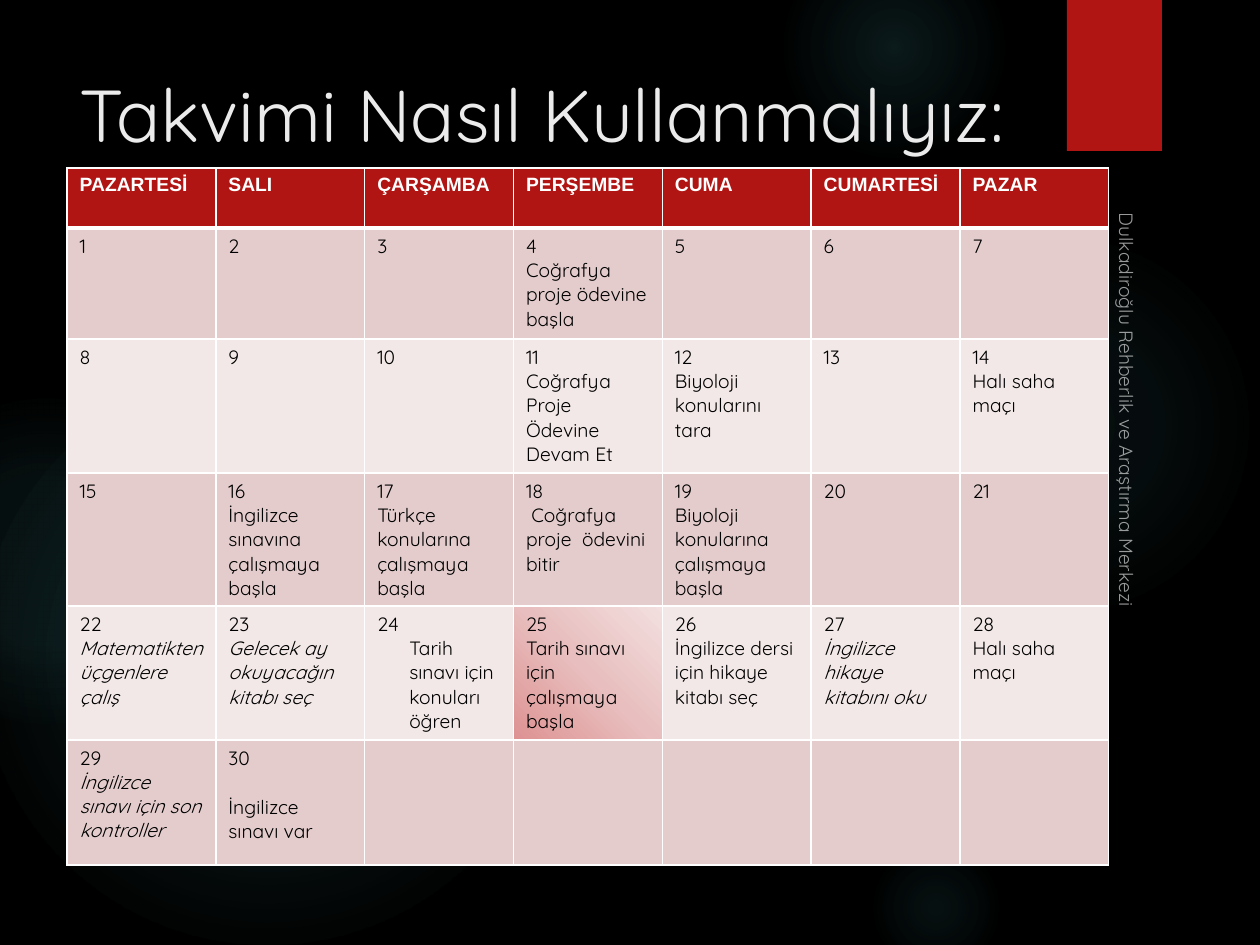
from lxml.etree import SubElement
from pptx import Presentation
from pptx.dml.color import RGBColor
from pptx.enum.shapes import MSO_SHAPE
from pptx.enum.text import MSO_ANCHOR
from pptx.oxml import parse_xml
from pptx.oxml.ns import nsdecls, qn
from pptx.util import Pt

PX = 914400 / 126
FONT = "Quicksand"
RED, WHITE, BLACK, GLOW = "B01513", "FFFFFF", "000000", "50B9C1"
DARK, PALE = "E4CCCC", "F2E8E7"

# left, top, size, then (stop, opacity) pairs in percent
GLOWS = [
    (868, 231, 388, [(0, 7), (36, 6), (69, 0)]),
    (784, -63, 220, [(0, 14), (36, 7), (73, 0)]),
    (868, 840, 136, [(0, 9), (36, 5), (66, 0)]),
    (-21, 368, 577, [(0, 11), (36, 10), (75, 0)]),
    (-116, 399, 325, [(0, 8), (36, 8), (72, 0)]),
]
DAYS = ["PAZARTESİ", "SALI", "ÇARŞAMBA", "PERŞEMBE", "CUMA", "CUMARTESİ", "PAZAR"]
TASKS = {
    4: "Coğrafya proje ödevine başla",
    11: "Coğrafya Proje Ödevine Devam Et",
    12: "Biyoloji konularını tara",
    14: "Halı saha maçı",
    16: "İngilizce sınavına çalışmaya başla",
    17: "Türkçe konularına çalışmaya başla",
    18: " Coğrafya proje  ödevini bitir",
    19: "Biyoloji konularına çalışmaya başla",
    22: "Matematikten üçgenlere çalış",
    23: "Gelecek ay okuyacağın kitabı seç",
    24: "Tarih sınavı için konuları öğren",
    25: "Tarih sınavı için çalışmaya başla",
    26: "İngilizce dersi için hikaye kitabı seç",
    27: "İngilizce hikaye kitabını oku",
    28: "Halı saha maçı",
    29: "İngilizce sınavı için son kontroller",
    30: "İngilizce sınavı var",
}
ITALIC = {22, 23, 27, 29}
INDENTED, EXAM, LAST = 24, 25, 30
ROWS = [60, 111, 134, 133, 134, 125]
WIDTH = 1042


def px(n):
    return round(n * PX)


def box(*nums):
    return [px(n) for n in nums]


def rgb(code):
    return RGBColor.from_string(code)


def style(par, size, color, font=FONT, bold=False, italic=False):
    face = par.font
    face.size, face.name, face.bold, face.italic = Pt(size), font, bold, italic
    face.color.rgb = rgb(color)


def radial(stops, focus):
    """Make a circular gradient from (stop, colour, opacity) around focus."""
    marks = "".join(
        f'<a:gs pos="{pos * 1000}"><a:srgbClr val="{code}">'
        f'<a:alpha val="{alpha * 1000}"/></a:srgbClr></a:gs>'
        for pos, code, alpha in stops)
    edges = " ".join(f'{side}="{n * 1000}"' for side, n in zip("ltrb", focus))
    return parse_xml(
        f'<a:gradFill {nsdecls("a")} rotWithShape="1"><a:gsLst>{marks}</a:gsLst>'
        f'<a:path path="circle"><a:fillToRect {edges}/></a:path></a:gradFill>')


def add_shape(slide, kind, *place):
    shape = slide.shapes.add_shape(kind, *box(*place))
    shape.shadow.inherit = False
    shape.line.fill.background()
    return shape


def add_glow(slide, left, top, size, stops):
    glow = add_shape(slide, MSO_SHAPE.OVAL, left, top, size, size)
    fill = radial([(pos, GLOW, alpha) for pos, alpha in stops], [50] * 4)
    glow._element.spPr.find(qn("a:prstGeom")).addnext(fill)


def add_text(slide, place, text, size, color, anchor):
    shape = slide.shapes.add_textbox(*box(*place))
    frame = shape.text_frame
    frame.word_wrap = True
    frame.vertical_anchor = anchor
    frame.text = text
    style(frame.paragraphs[0], size, color)
    return shape


def add_side(slide):
    side = add_text(slide, (859, 450, 532, 32),
                    "Dulkadiroğlu Rehberlik ve Araştırma Merkezi",
                    11, WHITE, MSO_ANCHOR.BOTTOM)
    side.rotation = 90
    for color in side._element.iter(qn("a:srgbClr")):
        SubElement(color, qn("a:alpha"), val="60000")


def frame_cell(cell, row):
    """Draw white borders, with a thick one under the header."""
    props = cell._tc.get_or_add_tcPr()
    thick = {0: "B", 1: "T"}.get(row)
    for side in "LRTB":
        width = 3 if side == thick else 1
        props.append(parse_xml(
            f'<a:ln{side} {nsdecls("a")} w="{Pt(width)}"><a:solidFill>'
            f'<a:srgbClr val="{WHITE}"/></a:solidFill></a:ln{side}>'))


def paint(cell, color):
    cell.fill.solid()
    cell.fill.fore_color.rgb = rgb(color)


def fill_day(cell, day):
    frame, task = cell.text_frame, TASKS.get(day)
    frame.text = f"{day}\n{task}" if task else str(day)
    for par in frame.paragraphs:
        style(par, 11, BLACK)
    last = frame.paragraphs[-1]
    last.font.italic = day in ITALIC
    if day == INDENTED:
        last._p.get_or_add_pPr().set("marL", str(px(32)))
    if day == LAST:
        last.space_before = Pt(14)


def add_month(slide):
    table = slide.shapes.add_table(
        len(ROWS), len(DAYS), *box(67, 168, WIDTH, sum(ROWS))).table
    for col in table.columns:
        col.width = px(WIDTH / len(DAYS))
    for row, height in enumerate(ROWS):
        table.rows[row].height = px(height)
        for col, name in enumerate(DAYS):
            cell = table.cell(row, col)
            frame_cell(cell, row)
            day = (row - 1) * len(DAYS) + col + 1
            if row == 0:
                cell.text = name
                style(cell.text_frame.paragraphs[0], 11, WHITE, "Arial", bold=True)
                paint(cell, RED)
                continue
            if day <= LAST:
                fill_day(cell, day)
            if day == EXAM:
                stops = [(0, "DE9292", 100), (50, "E8BEBE", 100), (100, "F3DFDF", 100)]
                cell._tc.tcPr.append(radial(stops, (0, 100, 100, 0)))
            else:
                paint(cell, DARK if row % 2 else PALE)


def main():
    deck = Presentation()
    deck.slide_width, deck.slide_height = box(1260, 945)
    slide = deck.slides.add_slide(deck.slide_layouts[6])
    back = slide.background.fill
    back.solid()
    back.fore_color.rgb = rgb(BLACK)
    for glow in GLOWS:
        add_glow(slide, *glow)
    tab = add_shape(slide, MSO_SHAPE.RECTANGLE, 1067, 0, 95, 151)
    tab.fill.solid()
    tab.fill.fore_color.rgb = rgb(RED)
    add_text(slide, (67, 63, 973, 137), "Takvimi Nasıl Kullanmalıyız:",
             42, "EBEBEB", MSO_ANCHOR.TOP)
    add_month(slide)
    add_side(slide)
    deck.save("out.pptx")


if __name__ == "__main__":
    main()
